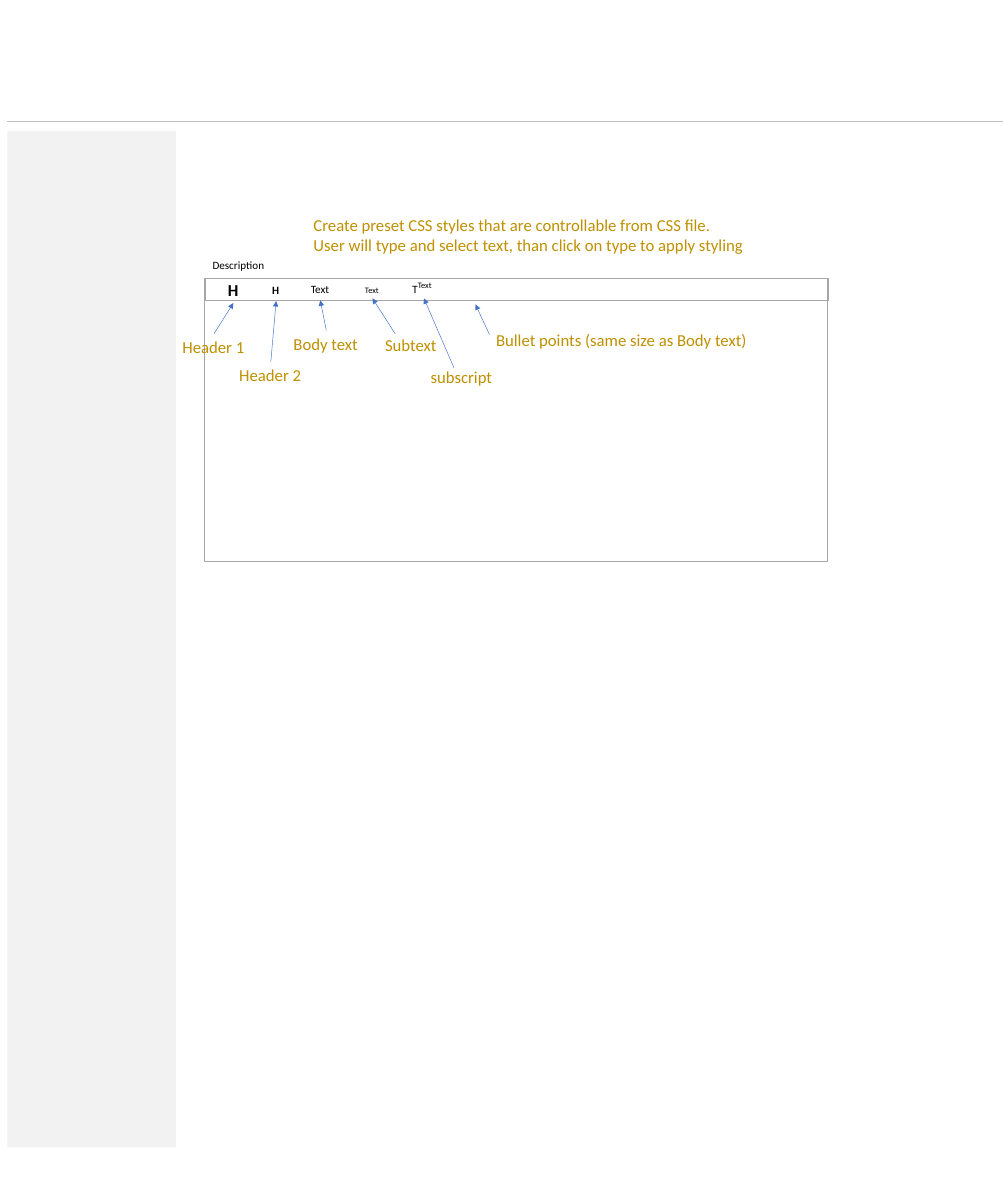
import pptx
import pptx.dml.color
import pptx.enum.dml
import pptx.enum.shapes
import pptx.enum.text
import pptx.oxml
import pptx.oxml.ns
import pptx.util

RGBColor = pptx.dml.color.RGBColor
BLACK = RGBColor(0x00, 0x00, 0x00)
GOLD = RGBColor(0xBF, 0x90, 0x00)
BLUE = RGBColor(0x44, 0x72, 0xC4)
PANEL_GREY = RGBColor(0xF2, 0xF2, 0xF2)
FRAME_GREY = RGBColor(0xA6, 0xA6, 0xA6)
RULE_GREY = RGBColor(0xBF, 0xBF, 0xBF)

EMU_PER_PX = 9144  # 100 px to the inch
BLANK_LAYOUT = 6

# text, left, top, width, height, size, bold
TOOLBAR_BUTTONS = [
    ("H", 331, 413, 36, 40, 18, True),
    ("H", 397, 419, 31, 30, 12, True),
    ("Text", 455, 418, 48, 30, 12, False),
    ("Text", 536, 421, 42, 25, 9, False),
    ("Text", 615, 414, 42, 25, 9, False),
    ("T", 607, 417, 28, 30, 12, False),
]

# text, left, top, width, arrow start, arrow end
CALLOUTS = [
    ("Header 1", 263, 499, 114, (320, 499), (349, 453)),
    ("Header 2", 348, 541, 114, (405, 541), (413, 450)),
    ("Body text", 429, 494, 117, (488, 494), (479, 449)),
    ("Subtext", 566, 495, 98, (591, 499), (557, 446)),
    ("subscript", 634, 543, 113, (679, 550), (634, 446)),
    ("Bullet points (same size as Body text)", 732, 488, 399,
     (732, 500), (711, 455)),
]


def px(length):
    return pptx.util.Emu(length * EMU_PER_PX)


class Sketch:
    """Holds the font and the current page, and draws on that page."""

    def __init__(self, page, font_name):
        self.page = page
        self.font_name = font_name

    def rectangle(self, left, top, width, height, fill=None, line=None):
        shape = self.page.shapes.add_shape(
            pptx.enum.shapes.MSO_SHAPE.RECTANGLE,
            px(left), px(top), px(width), px(height))
        shape.shadow.inherit = False
        if fill is None:
            shape.fill.background()
        else:
            shape.fill.solid()
            shape.fill.fore_color.rgb = fill
        if line is None:
            shape.line.fill.background()
        else:
            shape.line.color.rgb = line
            shape.line.width = pptx.util.Pt(1)

    def line(self, start, end, color, arrow=False):
        connector = self.page.shapes.add_connector(
            pptx.enum.shapes.MSO_CONNECTOR.STRAIGHT,
            px(start[0]), px(start[1]), px(end[0]), px(end[1]))
        connector.line.color.rgb = color
        connector.line.width = pptx.util.Pt(0.5)
        if arrow:
            head = pptx.oxml.parse_xml(
                '<a:tailEnd %s type="triangle"/>' % pptx.oxml.ns.nsdecls("a"))
            connector.line._get_or_add_ln().append(head)
        no_effects = pptx.oxml.parse_xml(
            "<a:effectLst %s/>" % pptx.oxml.ns.nsdecls("a"))
        connector._element.spPr.append(no_effects)

    def text(self, text, left, top, width, height,
             size=18, color=BLACK, bold=False):
        """Write each line of the text as its own paragraph."""
        box = self.page.shapes.add_textbox(
            px(left), px(top), px(width), px(height))
        frame = box.text_frame
        frame.word_wrap = False
        frame.auto_size = pptx.enum.text.MSO_AUTO_SIZE.SHAPE_TO_FIT_TEXT
        frame.text = text
        for para in frame.paragraphs:
            for span in para.runs:
                span.font.name = self.font_name
                span.font.size = pptx.util.Pt(size)
                span.font.bold = bold
                span.font.color.rgb = color


def main():
    deck = pptx.Presentation()
    deck.slide_width = px(1500)
    deck.slide_height = px(1800)
    page = deck.slides.add_slide(deck.slide_layouts[BLANK_LAYOUT])
    sketch = Sketch(page, "Calibri")

    # Editor with its toolbar
    sketch.rectangle(306, 416, 932, 424, line=FRAME_GREY)
    sketch.rectangle(308, 416, 931, 34, line=FRAME_GREY)
    for text, left, top, width, height, size, bold in TOOLBAR_BUTTONS:
        sketch.text(text, left, top, width, height, size=size, bold=bold)

    # Page frame
    sketch.rectangle(11, 196, 252, 1519, fill=PANEL_GREY)
    sketch.line((11, 181), (1500, 181), RULE_GREY)

    # Notes on the editor
    sketch.text("Description", 308, 381, 98, 30, size=12)
    sketch.text(
        "Create preset CSS styles that are controllable from CSS file.\n"
        "User will type and select text, than click on type to apply styling",
        459, 316, 670, 131, color=GOLD)
    for text, left, top, width, start, end in CALLOUTS:
        sketch.text(text, left, top, width, 71, color=GOLD)
        sketch.line(start, end, BLUE, arrow=True)

    deck.save("out.pptx")


if __name__ == "__main__":
    main()
